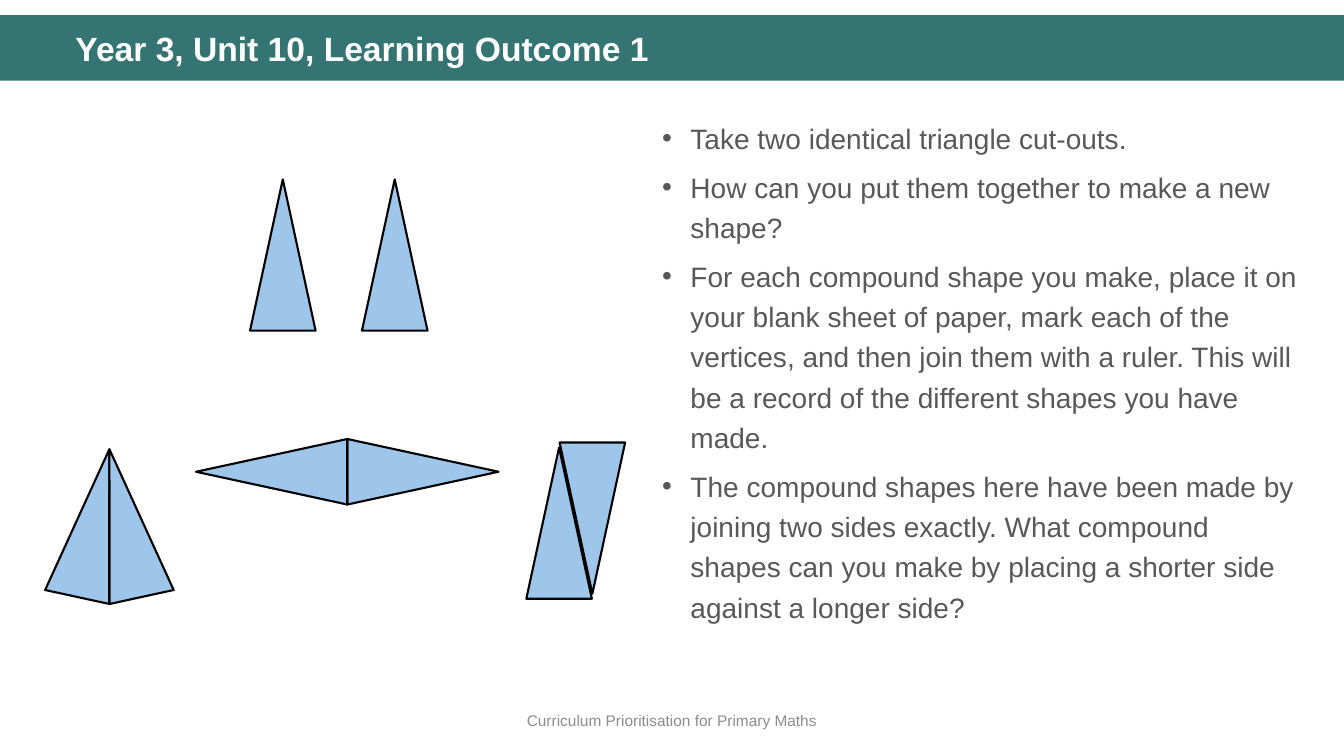
from lxml.etree import SubElement
from pptx import Presentation
from pptx.dml.color import RGBColor
from pptx.enum.shapes import MSO_SHAPE
from pptx.enum.text import MSO_ANCHOR, PP_ALIGN
from pptx.oxml.ns import qn
from pptx.util import Pt

SCALE = 9144  # EMU in one px, 100 px to the inch


def px(n):
    return n * SCALE


def color(code):
    return RGBColor.from_string(code)


class Page:
    font = "Arial"
    teal, blue, black = "347574", "9EC6EB", "000000"
    white, gray, pale = "FFFFFF", "585858", "8C8C8C"
    tall, wide = 150, 65  # triangle size

    def __init__(self, deck):
        self.slide = deck.slides.add_slide(deck.slide_layouts[6])

    def shape(self, home, kind, box, fill, line=None, turn=0):
        item = home.shapes.add_shape(kind, *map(px, box))
        item.shadow.inherit = False
        item.rotation = turn
        item.fill.solid()
        item.fill.fore_color.rgb = color(fill)
        if line:
            item.line.color.rgb = color(line)
            item.line.width = Pt(1.5)
        else:
            item.line.fill.background()

    def band(self, box):
        self.shape(self.slide, MSO_SHAPE.RECTANGLE, box, self.teal)

    def wedge(self, home, left, top, turn=0):
        self.shape(home, MSO_SHAPE.ISOSCELES_TRIANGLE,
                   (left, top, self.wide, self.tall), self.blue, self.black, turn)

    def pair(self, *parts):
        group = self.slide.shapes.add_group_shape()
        for part in parts:
            self.wedge(group, *part)

    def text(self, box, lines, size, tint, bold=False, space=1.0,
             align=PP_ALIGN.LEFT, anchor=MSO_ANCHOR.TOP, dots=False):
        frame = self.slide.shapes.add_textbox(*map(px, box)).text_frame
        frame.word_wrap = True
        frame.vertical_anchor = anchor
        frame.text = "\n".join(lines)
        for i, para in enumerate(frame.paragraphs):
            if dots:
                self.bullet(para, tint)
            para.alignment = align
            para.line_spacing = space
            if i:
                para.space_before = Pt(6)
            for run in para.runs:
                run.font.name = self.font
                run.font.size = Pt(size)
                run.font.bold = bold
                run.font.color.rgb = color(tint)

    def bullet(self, para, tint):
        props = para._p.get_or_add_pPr()
        props.set("marL", str(px(28)))
        props.set("indent", str(px(-28)))
        hue = SubElement(props, qn("a:buClr"))
        SubElement(hue, qn("a:srgbClr"), val=tint)
        SubElement(props, qn("a:buFont"), typeface=self.font)
        SubElement(props, qn("a:buChar"), char="•")


def main():
    deck = Presentation()
    deck.slide_width, deck.slide_height = px(1333), px(750)
    page = Page(deck)

    # Title band and footer
    page.band((0, 15, 1333, 65))
    page.text((0, 695, 1333, 40), ["Curriculum Prioritisation for Primary Maths"],
              11, page.pale, align=PP_ALIGN.CENTER, anchor=MSO_ANCHOR.MIDDLE)
    page.text((65, 27, 1232, 47), ["Year 3, Unit 10, Learning Outcome 1"],
              24, page.white, bold=True, space=0.9)

    # Two separate triangles
    for left in (248, 359):
        page.wedge(page.slide, left, 178)

    # Compound shapes: kite, rhombus, parallelogram
    page.pair((60, 444, 12.3), (92, 444, -12.3))
    page.pair((387, 393, 90), (387 - page.tall, 393, 270))
    page.pair((522, 444), (555, 439, 180))

    # Instructions
    page.text((647, 109, 650, 577), [
        "Take two identical triangle cut-outs.",
        "How can you put them together to make a new shape?",
        "For each compound shape you make, place it on your blank sheet of paper, "
        "mark each of the vertices, and then join them with a ruler. "
        "This will be a record of the different shapes you have made.",
        "The compound shapes here have been made by joining two sides exactly. "
        "What compound shapes can you make by placing a shorter side "
        "against a longer side?",
    ], 20, page.gray, space=1.2, dots=True)

    deck.save("out.pptx")


if __name__ == "__main__":
    main()
